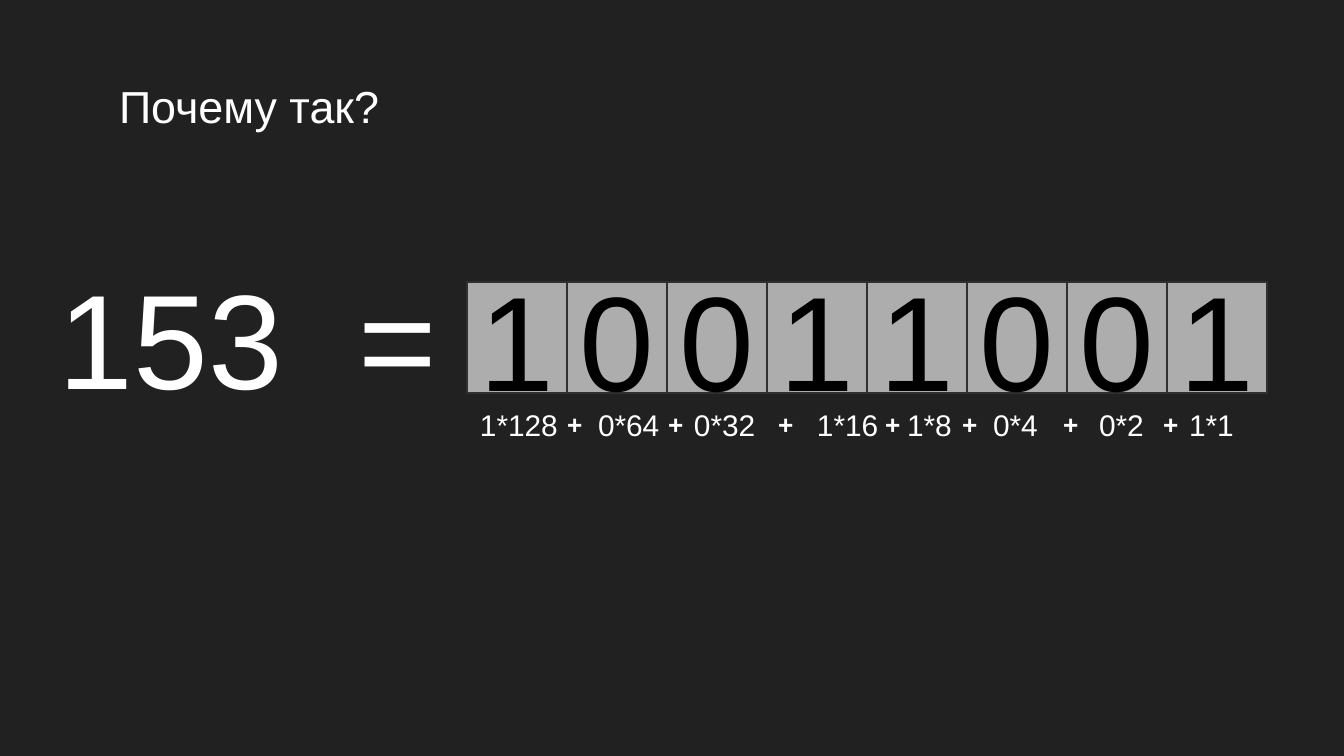
from pptx import Presentation
from pptx.dml.color import RGBColor
from pptx.enum.shapes import MSO_SHAPE
from pptx.enum.text import MSO_ANCHOR, PP_ALIGN
from pptx.util import Pt
from lxml.etree import SubElement
from pptx.oxml.ns import qn

TITLE = "Почему так?"
EQUATION = "153\t="
BITS = "10011001"
TERMS = [
    ("1*128", 467, 156), ("0*64", 585, 99), ("0*32", 681, 109), ("1*16", 804, 109),
    ("1*8", 894, 81), ("0*4", 980, 81), ("0*2", 1086, 81), ("1*1", 1176, 81),
]
PLUS_LEFTS = [554, 655, 765, 872, 949, 1050, 1150]
CELL_LEFT, CELL_TOP, CELL_W, CELL_H = 467, 282, 100, 111
INSET = 13
EQUALS_TAB = 299


def px(n):
    return round(n * 914400 / 134.4)


def rgb(color):
    return RGBColor.from_string(color)


def write(shape, text, size, color="FFFFFF", bold=False, anchor=MSO_ANCHOR.TOP):
    tf = shape.text_frame
    tf.text = text
    tf.word_wrap = True
    tf.vertical_anchor = anchor
    tf.margin_left = tf.margin_right = tf.margin_top = tf.margin_bottom = px(INSET)
    p = tf.paragraphs[0]
    p.alignment = PP_ALIGN.LEFT
    font = p.runs[0].font
    font.name, font.size, font.bold = "Arial", Pt(size), bold
    font.color.rgb = rgb(color)
    return p


def add_text(s, text, box, size, bold=False):
    return write(s.shapes.add_textbox(*map(px, box)), text, size, bold=bold)


def add_bit(s, i, bit):
    box = (CELL_LEFT + i * CELL_W, CELL_TOP, CELL_W, CELL_H)
    sp = s.shapes.add_shape(MSO_SHAPE.RECTANGLE, *map(px, box))
    sp.shadow.inherit = False
    sp.fill.solid()
    sp.fill.fore_color.rgb = rgb("ADADAD")
    sp.line.color.rgb = rgb("303030")
    sp.line.width = Pt(0.75)
    write(sp, bit, 72, "000000", anchor=MSO_ANCHOR.MIDDLE)


def main():
    prs = Presentation()
    prs.slide_width, prs.slide_height = px(1344), px(756)
    s = prs.slides.add_slide(prs.slide_layouts[6])
    s.background.fill.solid()
    s.background.fill.fore_color.rgb = rgb("212121")

    p = add_text(s, EQUATION, (46, 242, 1091, 190), 72)
    tabs = SubElement(p._p.get_or_add_pPr(), qn("a:tabLst"))
    SubElement(tabs, qn("a:tab"), pos=str(px(EQUALS_TAB)), algn="l")

    add_text(s, TITLE, (106, 66, 907, 82), 24)
    for i, bit in enumerate(BITS):
        add_bit(s, i, bit)
    for term, left, width in TERMS:
        add_text(s, term, (left, 394, width, 63), 16)
    for left in PLUS_LEFTS:
        add_text(s, "+", (left, 395, 50, 59), 14, bold=True)
    prs.save("out.pptx")


if __name__ == "__main__":
    main()
